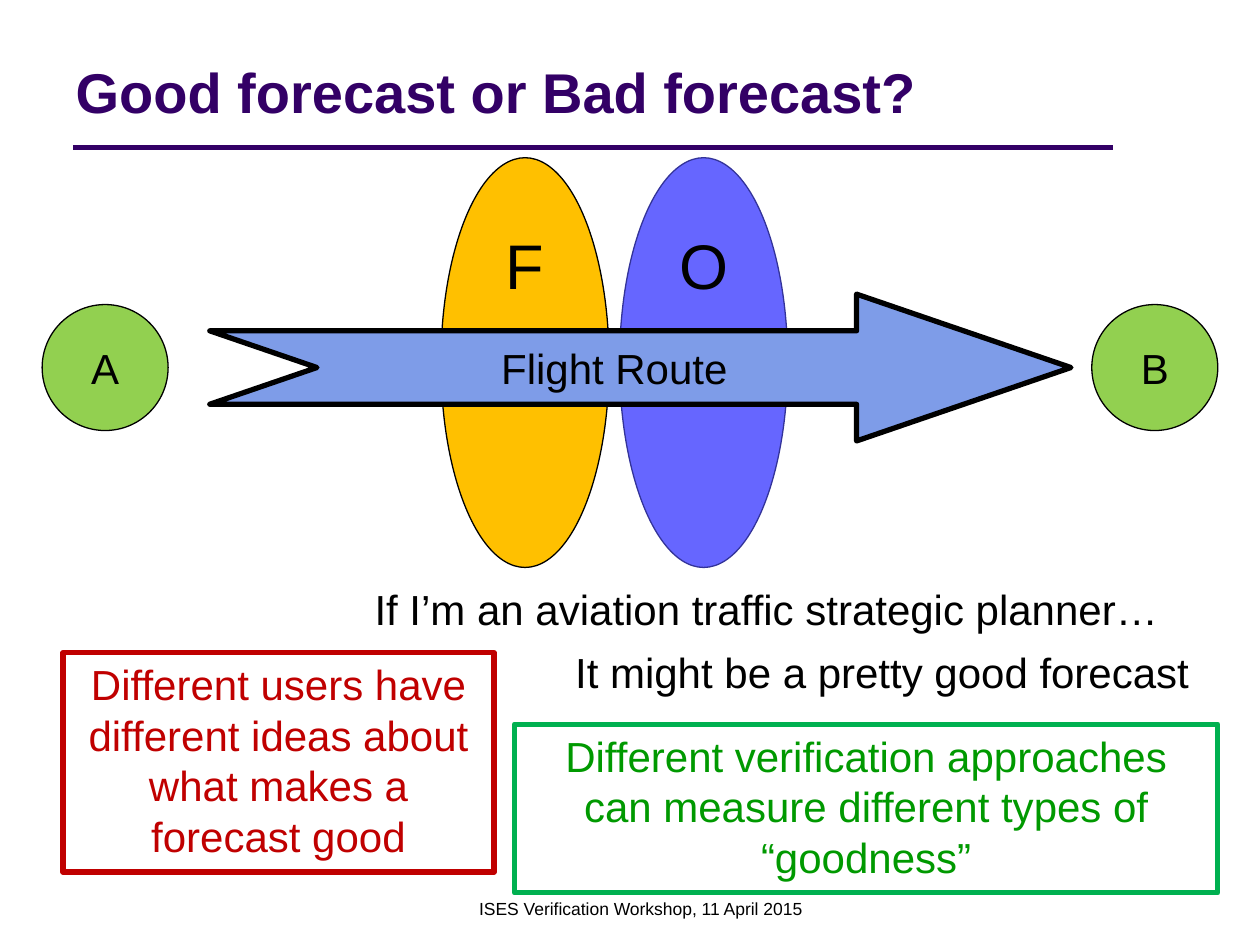
import pptx
import pptx.util
import pptx.dml.color
import pptx.enum.shapes
import pptx.enum.text
import pptx.oxml.ns
import lxml.etree

Cm = pptx.util.Cm
Pt = pptx.util.Pt
RGBColor = pptx.dml.color.RGBColor
SHAPE = pptx.enum.shapes.MSO_SHAPE
ALIGN = pptx.enum.text.PP_ALIGN
ANCHOR = pptx.enum.text.MSO_ANCHOR

BLACK = RGBColor(0x00, 0x00, 0x00)
PURPLE = RGBColor(0x33, 0x00, 0x66)
LIME = RGBColor(0x92, 0xD0, 0x50)
AMBER = RGBColor(0xFF, 0xC0, 0x00)
VIOLET = RGBColor(0x66, 0x66, 0xFF)
NAVY = RGBColor(0x33, 0x33, 0x99)
ROUTE_BLUE = RGBColor(0x7E, 0x9C, 0xE8)
RED = RGBColor(0xC0, 0x00, 0x00)
GREEN_FRAME = RGBColor(0x00, 0xB0, 0x50)
GREEN_TEXT = RGBColor(0x00, 0x99, 0x00)


def write_text(shape, text, size, color=BLACK, align=ALIGN.CENTER,
               anchor=ANCHOR.TOP, bold=False):
    frame = shape.text_frame
    frame.word_wrap = True
    frame.vertical_anchor = anchor
    frame.text = text
    para = frame.paragraphs[0]
    para.alignment = align
    para.font.name = "Arial"
    para.font.size = Pt(size)
    para.font.bold = bold
    para.font.color.rgb = color


def add_label(shapes, bounds, text, size=24):
    box = shapes.add_textbox(*map(Cm, bounds))
    write_text(box, text, size)


def add_outlined(shapes, kind, bounds, fill, line, width):
    shape = shapes.add_shape(kind, *map(Cm, bounds))
    shape.shadow.inherit = False
    if fill is None:
        shape.fill.background()
    else:
        shape.fill.solid()
        shape.fill.fore_color.rgb = fill
    shape.line.color.rgb = line
    shape.line.width = Pt(width)
    return shape


def add_labelled_ellipse(slide, bounds, fill, line, text, size, label_box):
    """Group an ellipse with a label centred across it."""
    left, top, width, height = bounds
    label_top, label_width, label_height = label_box
    shapes = slide.shapes.add_group_shape().shapes
    add_outlined(shapes, SHAPE.OVAL, bounds, fill, line, 0.75)
    label_left = left + (width - label_width) / 2
    add_label(shapes, (label_left, label_top, label_width, label_height), text, size)


def add_flight_route(slide):
    shapes = slide.shapes.add_group_shape().shapes
    arrow = add_outlined(shapes, SHAPE.NOTCHED_RIGHT_ARROW,
                         (4.23, 5.93, 17.36, 2.96), ROUTE_BLUE, BLACK, 3)
    arrow.adjustments[0] = 0.5
    arrow.adjustments[1] = 1.46
    add_label(shapes, (9.74, 6.77, 5.29, 1.27), "Flight Route")


def add_framed_note(slide, bounds, text, frame_color, text_color):
    note = add_outlined(slide.shapes, SHAPE.RECTANGLE, bounds, None, frame_color, 3)
    write_text(note, text, 24, text_color)


def add_title(slide, text):
    title = slide.shapes.title
    title.left, title.top, title.width, title.height = map(Cm, (1.27, -0.2, 22.86, 2.84))
    write_text(title, text, 32, PURPLE, ALIGN.LEFT, ANCHOR.BOTTOM, True)
    rule = slide.shapes.add_connector(pptx.enum.shapes.MSO_CONNECTOR.STRAIGHT,
                                      Cm(1.48), Cm(2.97), Cm(22.44), Cm(2.97))
    rule.line.color.rgb = PURPLE
    rule.line.width = Pt(3)
    lxml.etree.SubElement(rule.line._get_or_add_ln().getparent(),
                          pptx.oxml.ns.qn("a:effectLst"))


def main():
    deck = pptx.Presentation()
    deck.slide_width, deck.slide_height = Cm(25.4), Cm(19.05)
    slide = deck.slides.add_slide(deck.slide_layouts.get_by_name("Title Only"))
    add_title(slide, "Good forecast or Bad forecast?")

    # Planner's view
    add_label(slide.shapes, (5.5, 11.64, 19.9, 1.27),
              "If I’m an aviation traffic strategic planner…")
    add_label(slide.shapes, (10.8, 12.91, 13.97, 1.27),
              "It might be a pretty good forecast")

    # Airports at both ends of the route
    for left, name in ((0.85, "A"), (22.01, "B")):
        add_labelled_ellipse(slide, (left, 6.14, 2.54, 2.54), LIME, BLACK,
                             name, 24, (6.77, 1.27, 1.27))

    # Observed and forecast areas, crossed by the route
    for left, name, fill, line in ((12.49, "O", VIOLET, NAVY),
                                   (8.89, "F", AMBER, BLACK)):
        add_labelled_ellipse(slide, (left, 3.18, 3.39, 8.26), fill, line,
                             name, 36, (4.45, 1.69, 1.78))
    add_flight_route(slide)

    # Conclusions
    add_framed_note(slide, (1.27, 13.16, 8.69, 4.42),
                    "Different users have different ideas about what makes a forecast good",
                    RED, RED)
    add_framed_note(slide, (10.37, 14.6, 14.18, 3.4),
                    "Different verification approaches can measure different types of “goodness”",
                    GREEN_FRAME, GREEN_TEXT)

    # Footer
    add_label(slide.shapes, (5.08, 17.98, 15.67, 0.64),
              "ISES Verification Workshop, 11 April 2015", 10)
    deck.save("out.pptx")


if __name__ == "__main__":
    main()
